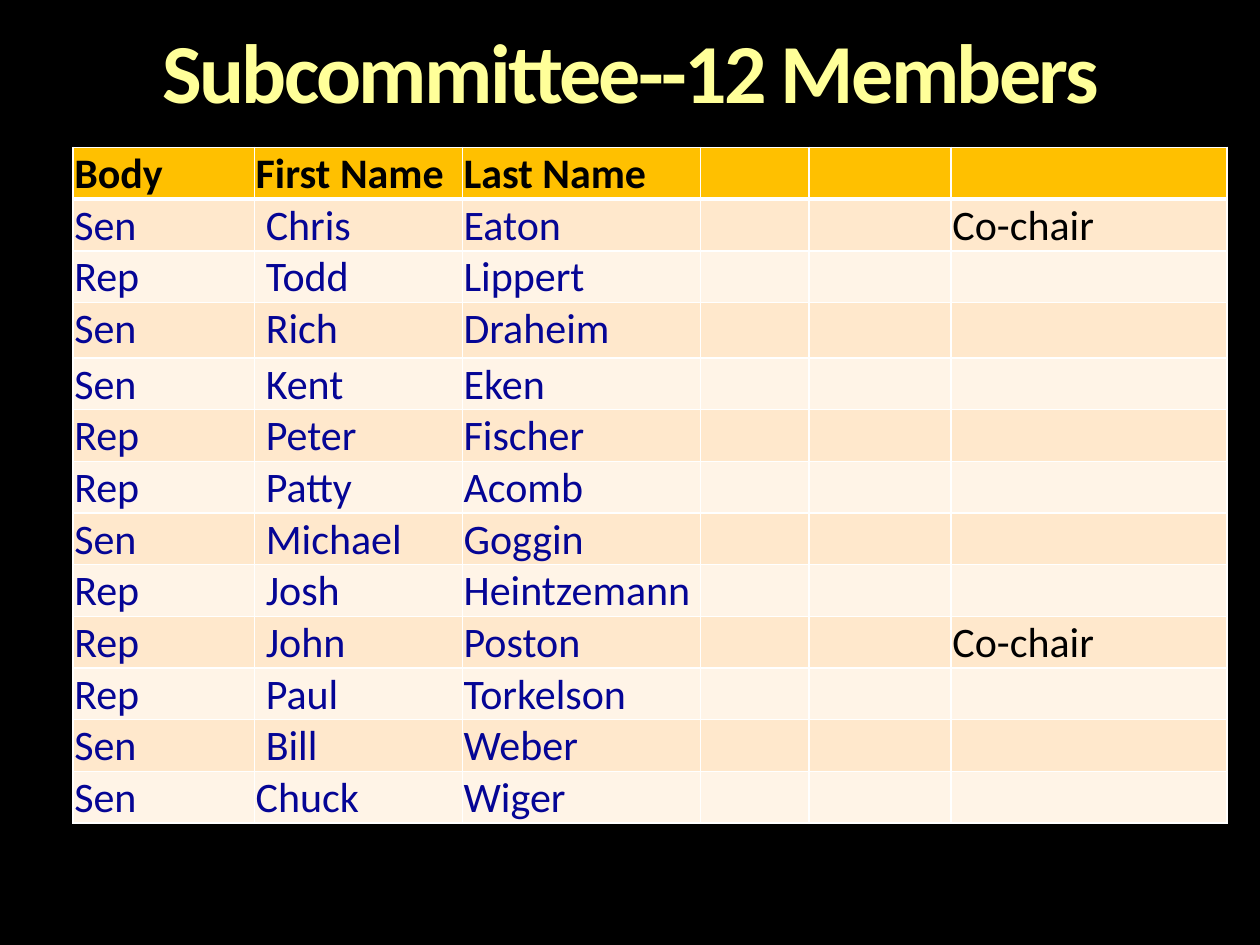
from pptx import Presentation
from pptx.dml.color import RGBColor as Rgb
from pptx.enum.text import MSO_ANCHOR as Anchor, MSO_AUTO_SIZE as Auto, PP_ALIGN as Align
from pptx.oxml import parse_xml
from pptx.oxml.ns import nsdecls
from pptx.util import Inches, Pt

WIDTH, HEIGHT = 10, 7.5
COLORS = {
    "back": "000000", "head": "FFC000", "odd": "FFE8CC", "even": "FFF4E7",
    "line": "FFFFFF", "dark": "000000", "name": "050595",
}
GLOW = [(0, "FFFFB9"), (36, "FFFF99"), (86, "F6AE1E")]
COLS = [1.44, 1.65, 1.89, 0.86, 1.13, 2.19]
ROW, TALL = 0.41, {3: 0.44}
EDGE, INDENT = 0.01, 0.09
HEADS = ["Body", "First Name", "Last Name"]
MEMBERS = [
    ("Sen", "Chris", "Eaton"), ("Rep", "Todd", "Lippert"),
    ("Sen", "Rich", "Draheim"), ("Sen", "Kent", "Eken"),
    ("Rep", "Peter", "Fischer"), ("Rep", "Patty", "Acomb"),
    ("Sen", "Michael", "Goggin"), ("Rep", "Josh", "Heintzemann"),
    ("Rep", "John", "Poston"), ("Rep", "Paul", "Torkelson"),
    ("Sen", "Bill", "Weber"), ("Sen", "Chuck", "Wiger"),
]
CHAIRS = {"Eaton", "Poston"}
FLUSH = {"Chuck"}


class Deck:
    def __init__(self, font):
        self.font = font
        self.prs = Presentation()
        self.prs.slide_width, self.prs.slide_height = Inches(WIDTH), Inches(HEIGHT)
        self.slide = self.prs.slides.add_slide(self.prs.slide_layouts[5])
        fill = self.slide.background.fill
        fill.solid()
        fill.fore_color.rgb = Rgb.from_string(COLORS["back"])

    def run(self, para, text, size, bold, color=None):
        run = para.add_run()
        run.text = text
        run.font.name, run.font.size, run.font.bold = self.font, Pt(size), bold
        if color:
            run.font.color.rgb = Rgb.from_string(COLORS[color])
        return run

    def title(self, text, left, top, width, height):
        """Fill the title placeholder; lengths are shares of the slide."""
        box = self.slide.shapes.title
        box.left, box.width = Inches(left * WIDTH), Inches(width * WIDTH)
        box.top, box.height = Inches(top * HEIGHT), Inches(height * HEIGHT)
        frame = box.text_frame
        frame.margin_left = frame.margin_right = frame.margin_top = frame.margin_bottom = 0
        frame.word_wrap, frame.auto_size = True, Auto.SHAPE_TO_FIT_TEXT
        frame.vertical_anchor = Anchor.TOP
        para = frame.paragraphs[0]
        para.alignment, para.line_spacing = Align.CENTER, 0.9
        props = self.run(para, text, 48, True).font._element
        props.set("spc", "-150")
        stops = "".join(
            f'<a:gs pos="{pos * 1000}"><a:srgbClr val="{tint}"/></a:gs>' for pos, tint in GLOW)
        props.insert(0, parse_xml(
            f'<a:gradFill {nsdecls("a")}><a:gsLst>{stops}</a:gsLst>'
            '<a:lin ang="5400000" scaled="0"/></a:gradFill>'))

    def borders(self, cell, row):
        """Thin lines all round, and a thick one under the head row."""
        sizes = {"L": 1, "R": 1, "T": 3 if row == 1 else 1, "B": 3 if row == 0 else 1}
        props = cell._tc.get_or_add_tcPr()
        for spot, (side, size) in enumerate(sizes.items()):
            props.insert(spot, parse_xml(
                f'<a:ln{side} {nsdecls("a")} w="{Pt(size)}"><a:solidFill>'
                f'<a:srgbClr val="{COLORS["line"]}"/></a:solidFill></a:ln{side}>'))

    def cell(self, cell, row, col, text):
        shade = "head" if row == 0 else "odd" if row % 2 else "even"
        cell.fill.solid()
        cell.fill.fore_color.rgb = Rgb.from_string(COLORS[shade])
        self.borders(cell, row)
        if not text:
            return
        inset = row and col == 1 and text not in FLUSH
        cell.margin_left = Inches(INDENT if inset else EDGE)
        cell.margin_right = cell.margin_top = Inches(EDGE)
        cell.margin_bottom = 0
        cell.vertical_anchor = Anchor.TOP if row else Anchor.BOTTOM
        color = "name" if row and col < len(HEADS) else "dark"
        self.run(cell.text_frame.paragraphs[0], text, 24, row == 0, color)

    def table(self, rows, left, top):
        highs = [TALL.get(row, ROW) for row in range(len(rows))]
        table = self.slide.shapes.add_table(
            len(rows), len(COLS), Inches(left * WIDTH), Inches(top * HEIGHT),
            Inches(sum(COLS)), Inches(sum(highs))).table
        for col, width in zip(table.columns, COLS):
            col.width = Inches(width)
        for row, texts in enumerate(rows):
            table.rows[row].height = Inches(highs[row])
            for col, text in enumerate(texts):
                self.cell(table.cell(row, col), row, col, text)


def main():
    deck = Deck("Calibri")
    deck.title("Subcommittee--12 Members", 0.042, 0.033, 0.917, 0.097)
    rows = [[*HEADS, "", "", ""]]
    rows += [[*who, "", "", "Co-chair" if who[2] in CHAIRS else ""] for who in MEMBERS]
    deck.table(rows, 0.058, 0.156)
    deck.prs.save("out.pptx")


if __name__ == "__main__":
    main()
